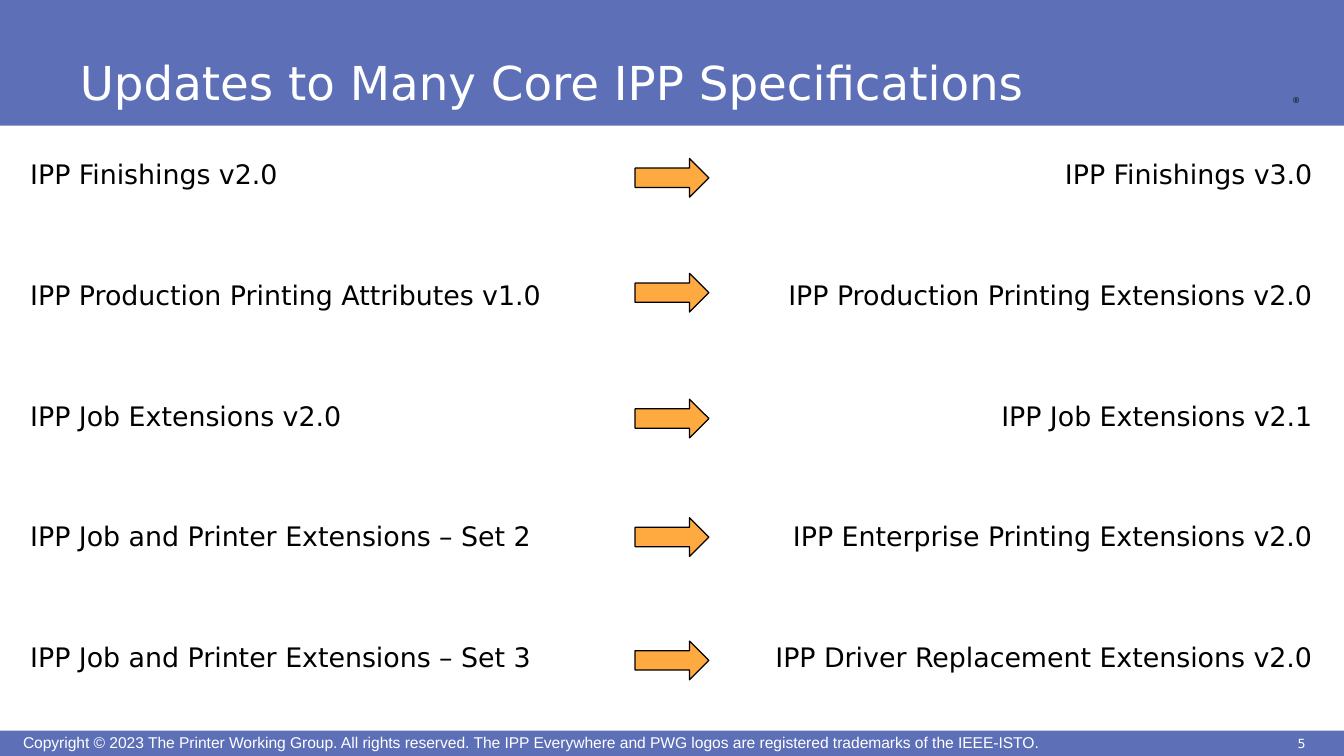
import pptx
import pptx.dml.color
import pptx.enum.shapes
import pptx.enum.text
import pptx.oxml
import pptx.oxml.ns
import pptx.util
from pptx.util import Inches

COLORS = {"band": "5D6FB7", "arrow": "FFA941", "dark": "000000", "light": "FFFFFF"}
TEXT_FONT = "DejaVu Sans"
SHAPES = pptx.enum.shapes.MSO_SHAPE
ALIGN = pptx.enum.text.PP_ALIGN
ANCHOR = pptx.enum.text.MSO_ANCHOR

OLD_SPECS = [
    "IPP Finishings v2.0",
    "IPP Production Printing Attributes v1.0",
    "IPP Job Extensions v2.0",
    "IPP Job and Printer Extensions – Set 2",
    "IPP Job and Printer Extensions – Set 3",
]
NEW_SPECS = [
    "IPP Finishings v3.0",
    "IPP Production Printing Extensions v2.0",
    "IPP Job Extensions v2.1",
    "IPP Enterprise Printing Extensions v2.0",
    "IPP Driver Replacement Extensions v2.0",
]
ARROW_TOPS = [1.31, 2.26, 3.3, 4.28, 5.3]
COPYRIGHT = (
    "Copyright © 2023 The Printer Working Group. All rights reserved. "
    "The IPP Everywhere and PWG logos are registered trademarks of the IEEE-ISTO."
)


def rgb(name):
    return pptx.dml.color.RGBColor.from_string(COLORS[name])


def place(shape, left, top, width, height):
    shape.left, shape.top = Inches(left), Inches(top)
    shape.width, shape.height = Inches(width), Inches(height)


def set_frame(frame, inset, anchor, wrap=True):
    frame.word_wrap = wrap
    frame.auto_size = pptx.enum.text.MSO_AUTO_SIZE.NONE
    frame.vertical_anchor = anchor
    frame.margin_left = frame.margin_right = Inches(inset)
    frame.margin_top = frame.margin_bottom = Inches(inset)


def style(paragraph, size, color, font=TEXT_FONT, align=ALIGN.LEFT, margin=0.04):
    """Set the side margins, drop the bullet, then set alignment and font."""
    properties = paragraph._p.get_or_add_pPr()
    properties.set("marL", str(Inches(margin)))
    properties.set("marR", str(Inches(margin)))
    properties.set("indent", "0")
    properties.append(pptx.oxml.parse_xml(
        f"<a:buNone {pptx.oxml.ns.nsdecls('a')}/>"))
    paragraph.alignment = align
    paragraph.font.name = font
    paragraph.font.size = pptx.util.Pt(size)
    paragraph.font.color.rgb = rgb(color)


def add_filled(slide, preset, fill, left, top, width, height):
    shape = slide.shapes.add_shape(
        preset, Inches(left), Inches(top), Inches(width), Inches(height))
    shape.shadow.inherit = False
    shape.fill.solid()
    shape.fill.fore_color.rgb = rgb(fill)
    shape.line.fill.background()
    return shape


def add_label(slide, text, left, top, width, height, size, color, inset=0,
              anchor=ANCHOR.MIDDLE, wrap=True, **text_style):
    label = slide.shapes.add_textbox(
        Inches(left), Inches(top), Inches(width), Inches(height))
    set_frame(label.text_frame, inset, anchor, wrap)
    paragraph = label.text_frame.paragraphs[0]
    paragraph.text = text
    style(paragraph, size, color, **text_style)


def add_header(slide, left, top, width, height):
    band = add_filled(slide, SHAPES.RECTANGLE, "band", left, top, width, height)
    title = slide.shapes.title
    title._element.addprevious(band._element)
    place(title, left + 0.56, top + 0.04, 9.2, 0.93)
    title.text_frame.text = "Updates to Many Core IPP Specifications"
    set_frame(title.text_frame, 0.06, ANCHOR.BOTTOM)
    style(title.text_frame.paragraphs[0], 27.8, "light")
    add_label(slide, "®", left + 10.58, top + 0.74, 0.27, 0.18, 5, "dark",
              inset=0.05, anchor=ANCHOR.TOP, wrap=False, font="Arial", margin=0.06)


def add_footer(slide, left, top, width, height):
    add_filled(slide, SHAPES.RECTANGLE, "band", left, top, width, height)
    add_label(slide, COPYRIGHT, left + 0.15, top + 0.02, 10.39, 0.16, 9.3, "light",
              font="Arial")
    add_label(slide, "5", left + width - 0.7, top, 0.7, height, 7.5, "light",
              align=ALIGN.CENTER, margin=0)


def fill_spec_list(column, specs, align, left, top, width, height):
    place(column, left, top, width, height)
    frame = column.text_frame
    frame.text = "\n".join(specs)
    set_frame(frame, 0.06, ANCHOR.TOP)
    for row, paragraph in enumerate(frame.paragraphs):
        style(paragraph, 16, "dark", align=align)
        paragraph.space_before = pptx.util.Pt(52.8 if row else 0)


def add_arrows(slide, left, tops, width, height):
    for top in tops:
        arrow = add_filled(slide, SHAPES.RIGHT_ARROW, "arrow", left, top, width, height)
        arrow.line.color.rgb = rgb("dark")
        arrow.line.width = pptx.util.Pt(0.75)


def main():
    deck = pptx.Presentation()
    deck.slide_width, deck.slide_height = Inches(11.11), Inches(6.25)
    slide = deck.slides.add_slide(deck.slide_layouts.get_by_name("Two Content"))
    add_header(slide, 0, 0, 11.11, 1.04)
    old_column, new_column = list(slide.placeholders)[1:]
    fill_spec_list(old_column, OLD_SPECS, ALIGN.LEFT, 0.15, 1.24, 5.2, 4.68)
    fill_spec_list(new_column, NEW_SPECS, ALIGN.RIGHT, 5.75, 1.24, 5.2, 4.68)
    add_arrows(slide, 5.25, ARROW_TOPS, 0.61, 0.32)
    add_footer(slide, 0, 6.04, 11.11, 0.21)
    deck.save("out.pptx")


if __name__ == "__main__":
    main()
